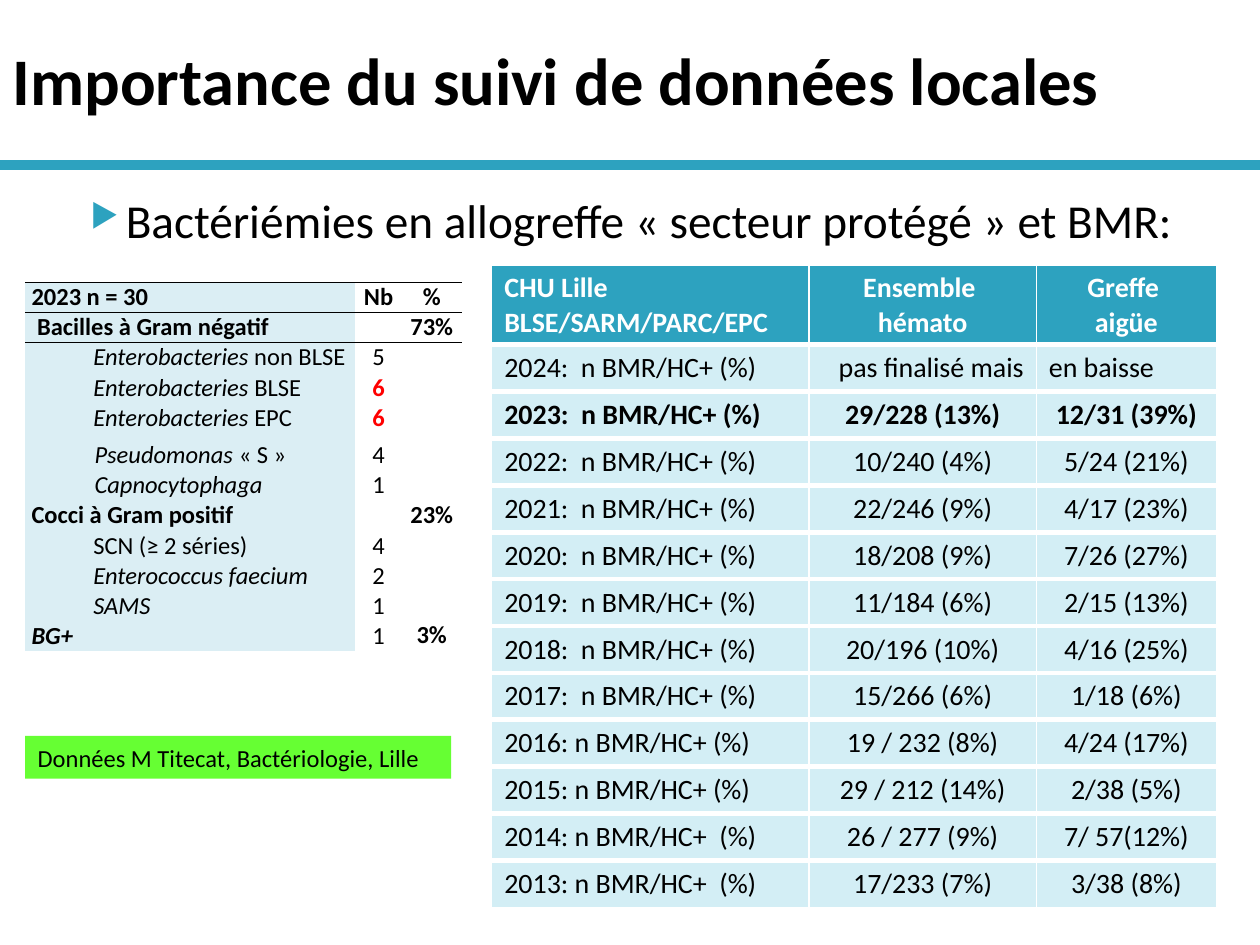
from lxml.etree import SubElement
from pptx import Presentation
from pptx.dml.color import RGBColor
from pptx.enum.shapes import MSO_CONNECTOR as Connector, MSO_SHAPE as Shape
from pptx.enum.text import MSO_ANCHOR as Anchor, MSO_AUTO_SIZE as AutoSize, PP_ALIGN as Align
from pptx.oxml.ns import qn
from pptx.util import Pt

FONT = "Calibri"
TEAL, BLACK, WHITE, RED = "2DA2BF", "000000", "FFFFFF", "FF0000"
PALE_TEAL, PALE_BLUE, GREEN = "D3EEF5", "DBEEF4", "66FF33"
NO_STYLE = "{2D5ABB26-0587-4C30-8999-92F81FD0307C}"

TITLE = "Importance du suivi de données locales"
HEADING = "Bactériémies en allogreffe « secteur protégé » et BMR:"
SOURCE = "Données M Titecat, Bactériologie, Lille"

RATE_HEADER = [("CHU Lille", "BLSE/SARM/PARC/EPC"), ("Ensemble ", "hémato"), ("Greffe ", "aigüe")]
RATES = [
    ("2024:  n BMR/HC+ (%)", "pas finalisé mais", "en baisse"),
    ("2023:  n BMR/HC+ (%)", "29/228 (13%)", "12/31 (39%)"),
    ("2022:  n BMR/HC+ (%)", "10/240 (4%)", "5/24 (21%)"),
    ("2021:  n BMR/HC+ (%)", "22/246 (9%)", "4/17 (23%)"),
    ("2020:  n BMR/HC+ (%)", "18/208 (9%)", "7/26 (27%)"),
    ("2019:  n BMR/HC+ (%)", "11/184 (6%)", "2/15 (13%)"),
    ("2018:  n BMR/HC+ (%)", "20/196 (10%)", "4/16 (25%)"),
    ("2017:  n BMR/HC+ (%)", "15/266 (6%)", "1/18 (6%)"),
    ("2016: n BMR/HC+ (%)", "19 / 232 (8%)", "4/24 (17%)"),
    ("2015: n BMR/HC+ (%)", "29 / 212 (14%)", "2/38 (5%)"),
    ("2014: n BMR/HC+  (%)", "26 / 277 (9%)", "7/ 57(12%)"),
    ("2013: n BMR/HC+  (%)", "17/233 (7%)", "3/38 (8%)"),
]
BOLD_RATE_ROW, UNFINISHED_ROW = 2, 1

GERMS = [
    (0, [("2023 n = 30", "b")], ("Nb", "b"), ("%", "b")),
    (0, [("\u00a0Bacilles à Gram négatif".replace("\u00a0", " "), "b")], None, ("73%", "b")),
    (35.3, [("Enterobacteries", "i"), (" non BLSE", "")], ("5", ""), None),
    (35.3, [("Enterobacteries ", "i"), ("BLSE", "")], ("6", "br"), None),
    (35.3, [("Enterobacteries ", "i"), ("EPC", "")], ("6", "br"), None),
    (36, [("Pseudomonas", "i"), (" « S »", "")], ("4", ""), None),
    (36, [("Capnocytophaga", "i")], ("1", ""), None),
    (0, [("Cocci à Gram positif", "b")], None, ("23%", "b")),
    (35.3, [("SCN (≥ 2 séries)", "")], ("4", ""), None),
    (35.3, [("Enterococcus faecium", "i")], ("2", ""), None),
    (35.3, [("SAMS", "i")], ("1", ""), None),
    (0, [("BG+", "bi")], ("1", ""), ("3%", "b")),
]
GERM_ROW, TALL_GERM_ROW, PSEUDOMONAS = 17.2, 21.6, 5


def color(value):
    return RGBColor.from_string(value)


def set_font(font, size, value=BLACK, bold=False, italic=False):
    font.name, font.size, font.bold, font.italic = FONT, Pt(size), bold, italic
    font.color.rgb = color(value)


def write(paragraph, runs, size, value=BLACK, align=Align.LEFT):
    paragraph.alignment = align
    for text, style in runs:
        run = paragraph.add_run()
        run.text = text
        set_font(run.font, size, RED if "r" in style else value, "b" in style, "i" in style)


def set_borders(cell, **widths):
    properties = cell._tc.get_or_add_tcPr()
    for index, side in enumerate(side for side in "LRTB" if side in widths):
        value, width = widths[side]
        line = properties.makeelement(qn(f"a:ln{side}"), {"w": str(Pt(width))})
        fill = SubElement(line, qn("a:solidFill"))
        SubElement(fill, qn("a:srgbClr"), val=value)
        properties.insert(index, line)


def add_table(slide, left, top, widths, heights):
    frame = slide.shapes.add_table(len(heights), len(widths), Pt(left), Pt(top),
                                   Pt(sum(widths)), Pt(sum(heights)))
    table = frame.table
    table.horz_banding = False
    for column, width in zip(table.columns, widths):
        column.width = Pt(width)
    for row, height in zip(table.rows, heights):
        row.height = Pt(height)
    return table


def add_rate_table(slide):
    rows = [RATE_HEADER] + [[(text,) for text in row] for row in RATES]
    table = add_table(slide, 281, 151.4, [181.3, 129.9, 103], [45.4] + [26.8] * len(RATES))
    for r, row in enumerate(rows):
        header = r == 0
        style = "b" if header or r == BOLD_RATE_ROW else ""
        for c, lines in enumerate(row):
            cell = table.cell(r, c)
            cell.fill.solid()
            cell.fill.fore_color.rgb = color(TEAL if header else PALE_TEAL)
            align = Align.CENTER if c else Align.LEFT
            if r == UNFINISHED_ROW:
                align = Align.RIGHT if c == 1 else Align.LEFT
            for n, line in enumerate(lines):
                frame = cell.text_frame
                paragraph = frame.add_paragraph() if n else frame.paragraphs[0]
                write(paragraph, [(line, style)], 16, WHITE if header else BLACK, align)
            set_borders(cell, L=(WHITE, 1), R=(WHITE, 1), T=(WHITE, 1 if header else 3),
                        B=(WHITE, 1 if r == len(RATES) else 3))


def add_germ_table(slide):
    heights = [TALL_GERM_ROW if r == PSEUDOMONAS else GERM_ROW for r in range(len(GERMS))]
    table = add_table(slide, 14.4, 161.3, [188.6, 26.7, 34.1], heights)
    table.first_row = False
    table._tbl.tblPr.find(qn("a:tableStyleId")).text = NO_STYLE
    for r, (indent, name, count, share) in enumerate(GERMS):
        for c, runs in enumerate([name, [count], [share]]):
            cell = table.cell(r, c)
            cell.margin_left = cell.margin_right = Pt(3.6)
            cell.margin_top = cell.margin_bottom = 0
            cell.vertical_anchor = Anchor.BOTTOM if r and c < 2 else Anchor.TOP
            paragraph = cell.text_frame.paragraphs[0]
            if runs[0]:
                write(paragraph, runs, 14, align=Align.CENTER if c else Align.LEFT)
            else:
                SubElement(paragraph._p, qn("a:endParaRPr"), sz="1400")
            if c == 0:
                paragraph._p.get_or_add_pPr().set("marL", str(Pt(indent)))
                cell.fill.solid()
                cell.fill.fore_color.rgb = color(PALE_BLUE)
            else:
                cell.fill.background()
            if r == 0:
                set_borders(cell, T=(BLACK, 1), B=(BLACK, 1))
            elif r == 1:
                set_borders(cell, T=(BLACK, 1))


def add_heading(slide):
    frame = slide.shapes.add_textbox(Pt(36), Pt(105.8), Pt(648), Pt(44)).text_frame
    frame.word_wrap = True
    paragraph = frame.paragraphs[0]
    paragraph.text = HEADING
    paragraph.space_before = Pt(4)
    set_font(paragraph.font, 27)
    properties = paragraph._p.get_or_add_pPr()
    properties.set("marL", str(Pt(28.8)))
    properties.set("indent", str(Pt(-20.2)))
    bullet_color = properties.makeelement(qn("a:buClr"), {})
    SubElement(bullet_color, qn("a:srgbClr"), val=TEAL)
    bullet_parts = [
        bullet_color,
        properties.makeelement(qn("a:buSzPct"), {"val": "68000"}),
        properties.makeelement(qn("a:buChar"), {"char": "▶"}),
    ]
    defaults = properties.find(qn("a:defRPr"))
    for part in bullet_parts:
        defaults.addprevious(part)


def main():
    presentation = Presentation()
    presentation.slide_width, presentation.slide_height = Pt(720), Pt(540)
    slide = presentation.slides.add_slide(presentation.slide_layouts[5])

    rule = slide.shapes.add_connector(Connector.STRAIGHT, 0, Pt(94.3), Pt(720), Pt(94.3))
    rule.line.color.rgb = color(TEAL)
    rule.line.width = Pt(6)
    SubElement(rule._element.spPr, qn("a:effectLst"))

    title = slide.shapes.title
    title.left, title.top, title.width, title.height = 0, 0, Pt(720), Pt(90)
    title.text_frame.text = TITLE
    title.text_frame.auto_size = AutoSize.NONE
    title.text_frame.vertical_anchor = Anchor.MIDDLE
    title.text_frame.paragraphs[0].alignment = Align.LEFT
    set_font(title.text_frame.paragraphs[0].font, 38, bold=True)

    add_heading(slide)
    add_rate_table(slide)

    source = slide.shapes.add_shape(Shape.RECTANGLE, Pt(14.4), Pt(420.5), Pt(243.4), Pt(24.5))
    source.shadow.inherit = False
    source.fill.solid()
    source.fill.fore_color.rgb = color(GREEN)
    source.line.fill.background()
    source.text_frame.word_wrap = True
    source.text_frame.text = SOURCE
    source.text_frame.paragraphs[0].alignment = Align.LEFT
    set_font(source.text_frame.paragraphs[0].font, 14)

    add_germ_table(slide)
    presentation.save("out.pptx")


if __name__ == "__main__":
    main()
